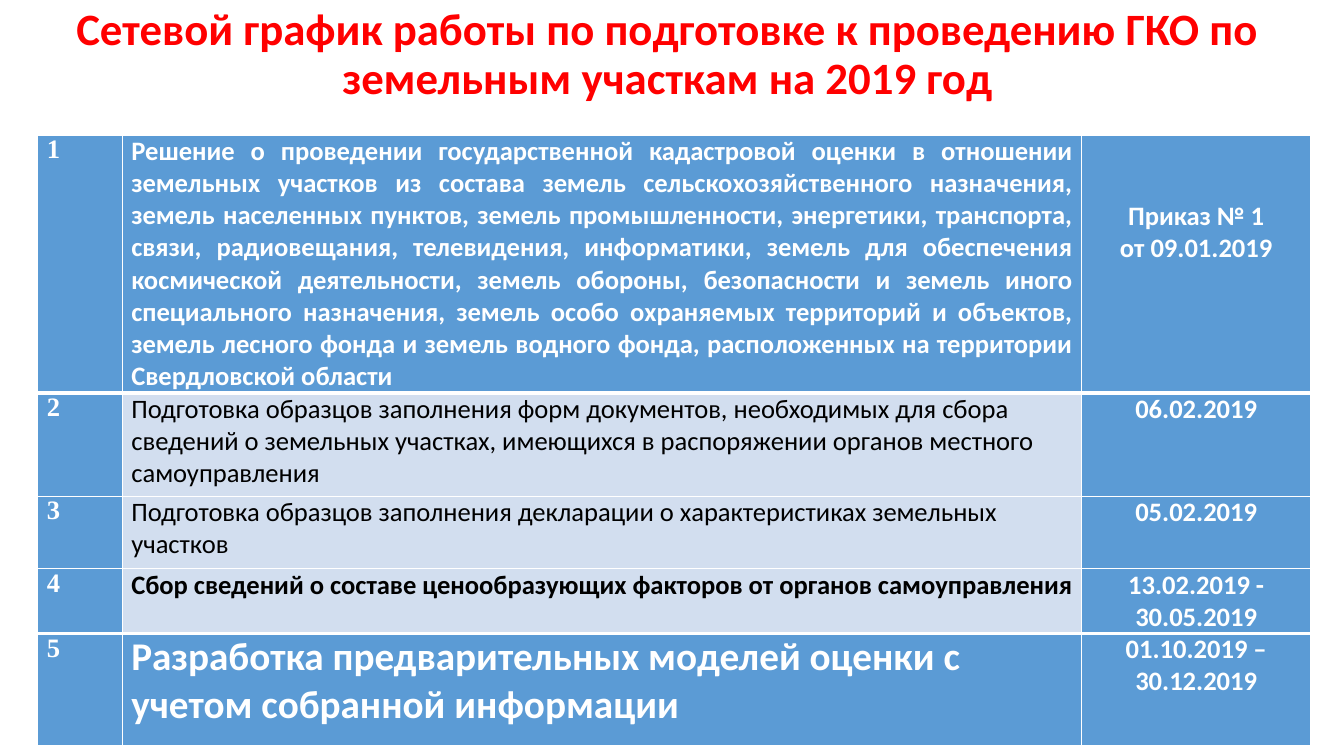
import dataclasses

import pptx
import pptx.dml.color
import pptx.enum.text
import pptx.oxml
import pptx.oxml.ns
import pptx.util
from pptx.util import Cm

ALIGN = pptx.enum.text.PP_ALIGN
ANCHOR = pptx.enum.text.MSO_ANCHOR
BLUE, PALE, WHITE, BLACK, RED = "5B9BD5", "D2DEEF", "FFFFFF", "000000", "FF0000"
COLUMN_WIDTHS = (2.13, 24.18, 5.77)


@dataclasses.dataclass
class Stage:
    task: str
    dates: tuple[str, ...]
    height: float
    fill: str = BLUE
    color: str = WHITE
    bold: bool = True
    size: float = 19
    align: ALIGN = ALIGN.LEFT
    date_top: float = 0
    line_above: float = 1
    line_below: float = 1


STAGES = [
    Stage("Решение о проведении государственной кадастровой оценки в отношении "
          "земельных участков из состава земель сельскохозяйственного назначения, "
          "земель населенных пунктов, земель промышленности, энергетики, транспорта, "
          "связи, радиовещания, телевидения, информатики, земель для обеспечения "
          "космической деятельности, земель обороны, безопасности и земель иного "
          "специального назначения, земель особо охраняемых территорий и объектов, "
          "земель лесного фонда и земель водного фонда, расположенных на территории "
          "Свердловской области",
          ("Приказ № 1", "от 09.01.2019"), 6.5,
          align=ALIGN.JUSTIFY, date_top=1.64, line_below=3),
    Stage("Подготовка образцов заполнения форм документов, необходимых для сбора "
          "сведений о земельных участках, имеющихся в распоряжении органов местного "
          "самоуправления",
          ("06.02.2019",), 2.6, PALE, BLACK, False, line_above=3),
    Stage("Подготовка образцов заполнения декларации о характеристиках земельных "
          "участков", ("05.02.2019",), 1.83, PALE, BLACK, False),
    Stage("Сбор сведений о составе ценообразующих факторов от органов самоуправления",
          ("13.02.2019 - 30.05.2019",), 1.6, PALE, BLACK, line_below=3),
    Stage("Разработка предварительных моделей оценки с учетом собранной информации",
          ("01.10.2019 – 30.12.2019",), 2.82, size=28, line_above=3),
]


def rgb(color: str) -> pptx.dml.color.RGBColor:
    return pptx.dml.color.RGBColor.from_string(color)


def write(tf, lines: tuple[str, ...], size: float, color: str, bold: bool = True,
          align: ALIGN = ALIGN.LEFT, font: str = "Calibri") -> None:
    for i, line in enumerate(lines):
        p = tf.add_paragraph() if i else tf.paragraphs[0]
        p.alignment = align
        r = p.add_run()
        r.text = line
        r.font.name = font
        r.font.size = pptx.util.Pt(size)
        r.font.bold = bold
        r.font.color.rgb = rgb(color)


def style_cell(cell, fill: str, above: float, below: float, top: float = 0) -> None:
    """Set fill, insets and white borders; border widths are in points."""
    cell.margin_left = cell.margin_right = Cm(0.23)
    cell.margin_top, cell.margin_bottom = Cm(top), 0
    cell.vertical_anchor = ANCHOR.TOP
    cell.fill.solid()
    cell.fill.fore_color.rgb = rgb(fill)
    borders = (("lnL", 1), ("lnR", 1), ("lnT", above), ("lnB", below))
    for i, (tag, width) in enumerate(borders):
        line = pptx.oxml.parse_xml(
            f'<a:{tag} {pptx.oxml.ns.nsdecls("a")} w="{pptx.util.Pt(width)}">'
            f'<a:solidFill><a:srgbClr val="{WHITE}"/></a:solidFill></a:{tag}>')
        cell._tc.get_or_add_tcPr().insert(i, line)


def add_title(s) -> None:
    title = s.shapes.title
    title.left, title.top, title.width, title.height = Cm(0.66), Cm(0.2), Cm(32.33), Cm(2.39)
    tf = title.text_frame
    tf.word_wrap = True
    tf.auto_size = pptx.enum.text.MSO_AUTO_SIZE.NONE
    tf.vertical_anchor = ANCHOR.MIDDLE
    write(tf, ("Сетевой график работы по подготовке к проведению ГКО "
               "по земельным участкам на 2019 год",), 32, RED, align=ALIGN.CENTER)
    tf.paragraphs[0].line_spacing = 0.9


def add_schedule(s) -> None:
    table = s.shapes.add_table(
        len(STAGES), len(COLUMN_WIDTHS), Cm(0.95), Cm(3.4),
        Cm(sum(COLUMN_WIDTHS)), Cm(sum(stage.height for stage in STAGES))).table
    table.first_row = table.horz_banding = False
    for column, width in zip(table.columns, COLUMN_WIDTHS):
        column.width = Cm(width)
    for i, (row, stage) in enumerate(zip(table.rows, STAGES), 1):
        row.height = Cm(stage.height)
        number, task, date = row.cells
        lines = stage.line_above, stage.line_below
        style_cell(number, BLUE, *lines)
        style_cell(task, stage.fill, *lines)
        style_cell(date, BLUE, *lines, stage.date_top)
        write(number.text_frame, (str(i),), 19, WHITE, font="Times New Roman")
        write(task.text_frame, (stage.task,), stage.size, stage.color, stage.bold, stage.align)
        write(date.text_frame, stage.dates, 19, WHITE, align=ALIGN.CENTER)


def main() -> None:
    prs = pptx.Presentation()
    prs.slide_width, prs.slide_height = Cm(33.87), Cm(19.05)
    s = prs.slides.add_slide(prs.slide_layouts[5])
    add_title(s)
    add_schedule(s)
    prs.save("out.pptx")


if __name__ == "__main__":
    main()
